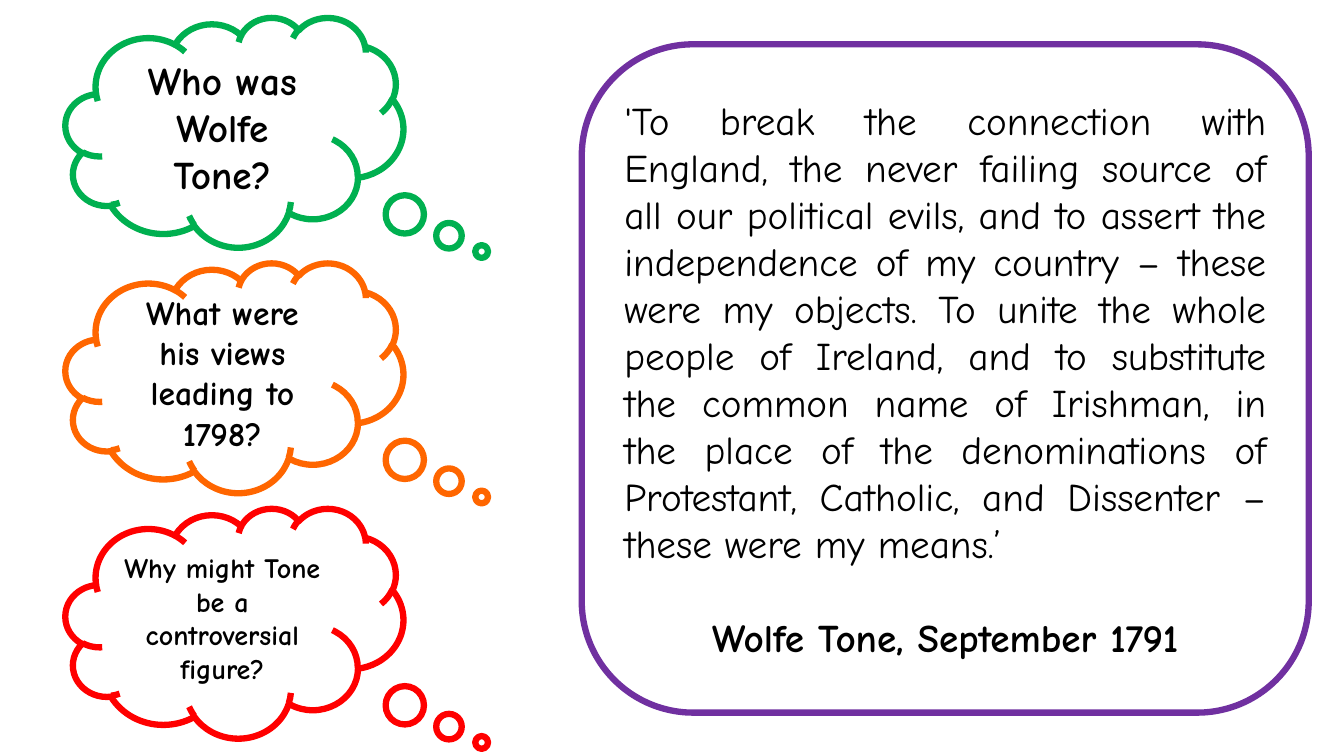
from pptx import Presentation
from pptx.dml.color import RGBColor
from pptx.enum.shapes import MSO_SHAPE
from pptx.enum.text import MSO_ANCHOR, PP_ALIGN
from pptx.util import Inches, Pt

FONT = "Comic Neue"
COLORS = {
    "text": "000000", "paper": "FFFFFF", "frame": "7030A0",
    "green": "00B050", "orange": "FF6600", "red": "FF0000",
}
QUOTE = (
    "'To break the connection with England, the never failing source of all "
    "our political evils, and to assert the independence of my country – these "
    "were my objects. To unite the whole people of Ireland, and to substitute "
    "the common name of Irishman, in the place of the denominations of "
    "Protestant, Catholic, and Dissenter – these were my means.’"
)
SOURCE = "Wolfe Tone, September 1791"
QUESTIONS = [
    ("Who was Wolfe Tone?", 28, "green"),
    ("What were his views leading to 1798?", 24, "orange"),
    ("Why might Tone be a controversial figure?", 20, "red"),
]
CLOUD_LEFT, CLOUD_TOP, CLOUD_STEP = 0.65, 0.17, 2.435
CLOUD_WIDTH, CLOUD_HEIGHT = 3.35, 2.28
TAIL = (0.732, 0.52)


def rgb(name):
    return RGBColor.from_string(COLORS[name])


def add_panel(slide, kind, box, color):
    """Add an outlined shape whose text is centred vertically."""
    panel = slide.shapes.add_shape(kind, *[Inches(v) for v in box])
    panel.shadow.inherit = False
    panel.fill.background()
    panel.line.color.rgb = rgb(color)
    panel.line.width = Pt(4.5)
    panel.text_frame.word_wrap = True
    panel.text_frame.vertical_anchor = MSO_ANCHOR.MIDDLE
    return panel


def write(para, text, size, bold=True, align=PP_ALIGN.CENTER):
    para.alignment = align
    run = para.add_run()
    run.text = text
    run.font.name = FONT
    run.font.size = Pt(size)
    run.font.bold = bold
    run.font.color.rgb = rgb("text")


def main():
    deck = Presentation()
    deck.slide_width, deck.slide_height = Inches(13.33), Inches(7.5)
    slide = deck.slides.add_slide(deck.slide_layouts[6])

    frame = add_panel(slide, MSO_SHAPE.ROUNDED_RECTANGLE,
                      (5.77, 0.44, 7.21, 6.63), "frame")
    frame.fill.solid()
    frame.fill.fore_color.rgb = rgb("paper")
    body = frame.text_frame
    write(body.paragraphs[0], QUOTE, 28, False, PP_ALIGN.JUSTIFY)
    credit = body.add_paragraph()
    credit.space_before = Pt(33.6)
    write(credit, SOURCE, 28)

    for row, (text, size, color) in enumerate(QUESTIONS):
        top = CLOUD_TOP + row * CLOUD_STEP
        cloud = add_panel(slide, MSO_SHAPE.CLOUD_CALLOUT,
                          (CLOUD_LEFT, top, CLOUD_WIDTH, CLOUD_HEIGHT), color)
        for index, value in enumerate(TAIL):
            cloud.adjustments[index] = value
        write(cloud.text_frame.paragraphs[0], text, size)

    deck.save("out.pptx")


if __name__ == "__main__":
    main()
